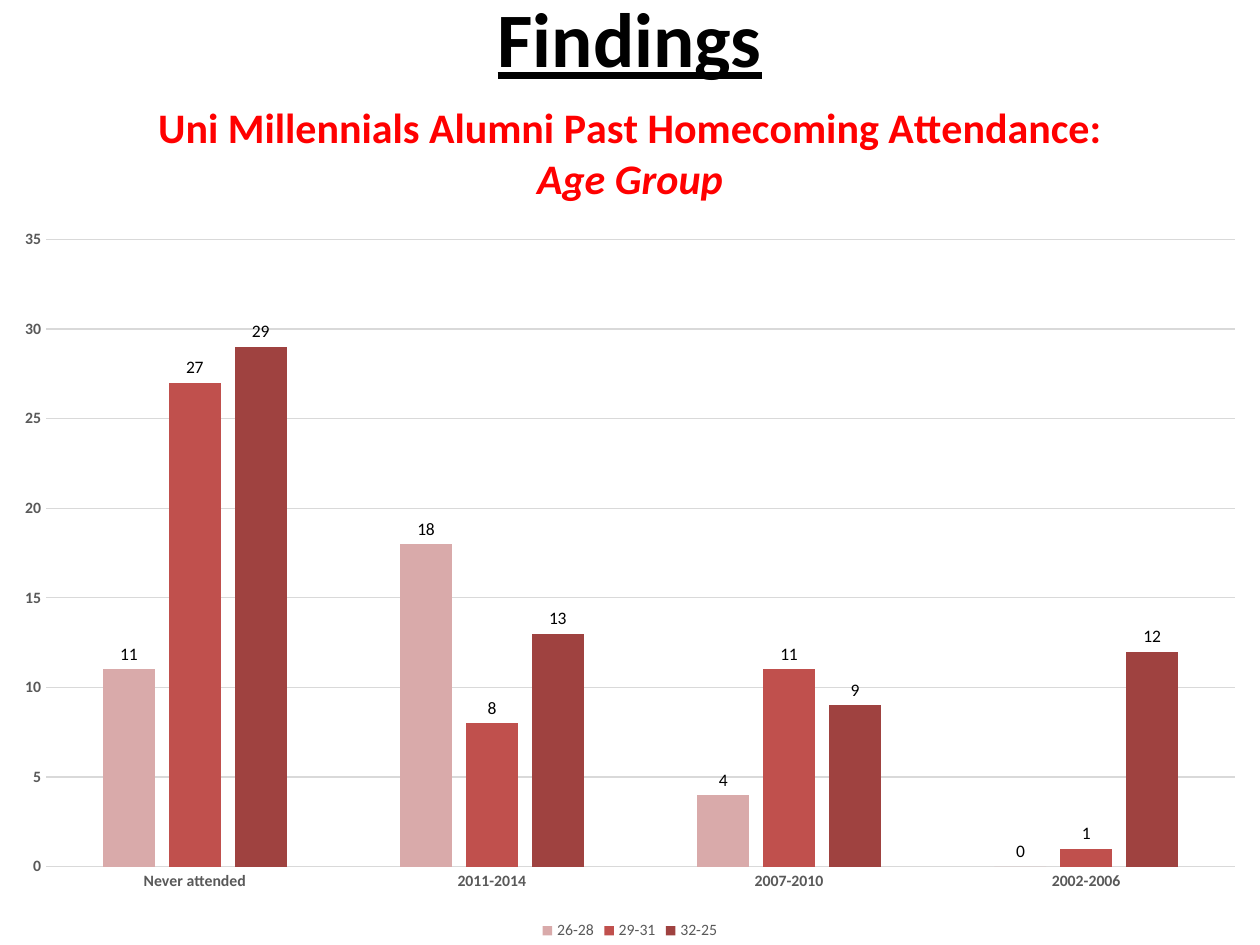
from pptx import Presentation
from pptx.chart.data import CategoryChartData
from pptx.dml.color import RGBColor
from pptx.enum.chart import (XL_CHART_TYPE, XL_LABEL_POSITION,
                             XL_LEGEND_POSITION, XL_TICK_MARK)
from pptx.enum.text import MSO_ANCHOR, PP_ALIGN
from pptx.util import Pt

COLUMNS = XL_CHART_TYPE.COLUMN_CLUSTERED
OUTSIDE = XL_LABEL_POSITION.OUTSIDE_END
BOTTOM = XL_LEGEND_POSITION.BOTTOM
NO_TICK = XL_TICK_MARK.NONE
MIDDLE = MSO_ANCHOR.MIDDLE
CENTER = PP_ALIGN.CENTER

BLACK = RGBColor(0x00, 0x00, 0x00)
RED = RGBColor(0xFF, 0x00, 0x00)
GRAY = RGBColor(0x59, 0x59, 0x59)
GRID = RGBColor(0xD9, 0xD9, 0xD9)
PINK = RGBColor(0xD9, 0xAA, 0xAA)
BRICK = RGBColor(0xC0, 0x50, 0x4D)
MAROON = RGBColor(0x9F, 0x42, 0x40)

PERIODS = ["Never attended", "2011-2014", "2007-2010", "2002-2006"]
AGE_GROUPS = [
    ("26-28", (11, 18, 4, 0), PINK),
    ("29-31", (27, 8, 11, 1), BRICK),
    ("32-25", (29, 13, 9, 12), MAROON),
]


class SlideBuilder:
    font_name = "Calibri"

    def __init__(self, slide):
        self.s = slide

    def style(self, font, size, color, bold=False):
        font.name = self.font_name
        font.size = Pt(size)
        font.color.rgb = color
        font.bold = bold

    def title(self, text, left, top, width, height):
        sp = self.s.shapes.title
        sp.left, sp.top, sp.width, sp.height = map(Pt, (left, top, width, height))
        tf = sp.text_frame
        tf.text = text
        tf.vertical_anchor = MIDDLE
        p = tf.paragraphs[0]
        p.alignment = CENTER
        self.style(p.font, 44, BLACK, bold=True)
        p.font.underline = True

    def column_chart(self, categories, series, left, top, width, height):
        data = CategoryChartData()
        data.categories = categories
        for name, values, _ in series:
            data.add_series(name, values)
        chart = self.s.shapes.add_chart(
            COLUMNS, *map(Pt, (left, top, width, height)), data).chart
        self.style(chart.font, 10, BLACK)

        plot = chart.plots[0]
        plot.gap_width = 219
        plot.overlap = -27
        plot.vary_by_categories = False
        for ser, (_, _, color) in zip(plot.series, series):
            ser.format.fill.solid()
            ser.format.fill.fore_color.rgb = color
            labels = ser.data_labels
            labels.show_value = True
            labels.position = OUTSIDE
            self.style(labels.font, 10, BLACK)

        for axis in (chart.category_axis, chart.value_axis):
            axis.major_tick_mark = axis.minor_tick_mark = NO_TICK
            self.style(axis.tick_labels.font, 9, GRAY, bold=True)
        chart.value_axis.format.line.fill.background()
        for lined in (chart.category_axis, chart.value_axis.major_gridlines):
            lined.format.line.color.rgb = GRID
            lined.format.line.width = Pt(0.75)

        chart.has_legend = True
        chart.legend.position = BOTTOM
        chart.legend.include_in_layout = False
        self.style(chart.legend.font, 9, GRAY)
        return chart

    def chart_title(self, chart, text, italic_text):
        p = chart.chart_title.text_frame.paragraphs[0]
        self.style(p.font, 24, RED, bold=True)
        p.add_run().text = text
        r = p.add_run()
        r.text = italic_text
        r.font.italic = True
        chart.chart_title.include_in_layout = False


def main():
    prs = Presentation()
    prs.slide_width, prs.slide_height = Pt(720), Pt(540)
    title_only = prs.slide_layouts[5]
    builder = SlideBuilder(prs.slides.add_slide(title_only))
    builder.title("Findings", 36, -24, 648, 90)
    chart = builder.column_chart(PERIODS, AGE_GROUPS, 0, 42, 720, 498)
    builder.chart_title(
        chart, "Uni Millennials Alumni Past Homecoming Attendance: ", "Age Group")
    prs.save("out.pptx")


if __name__ == "__main__":
    main()
